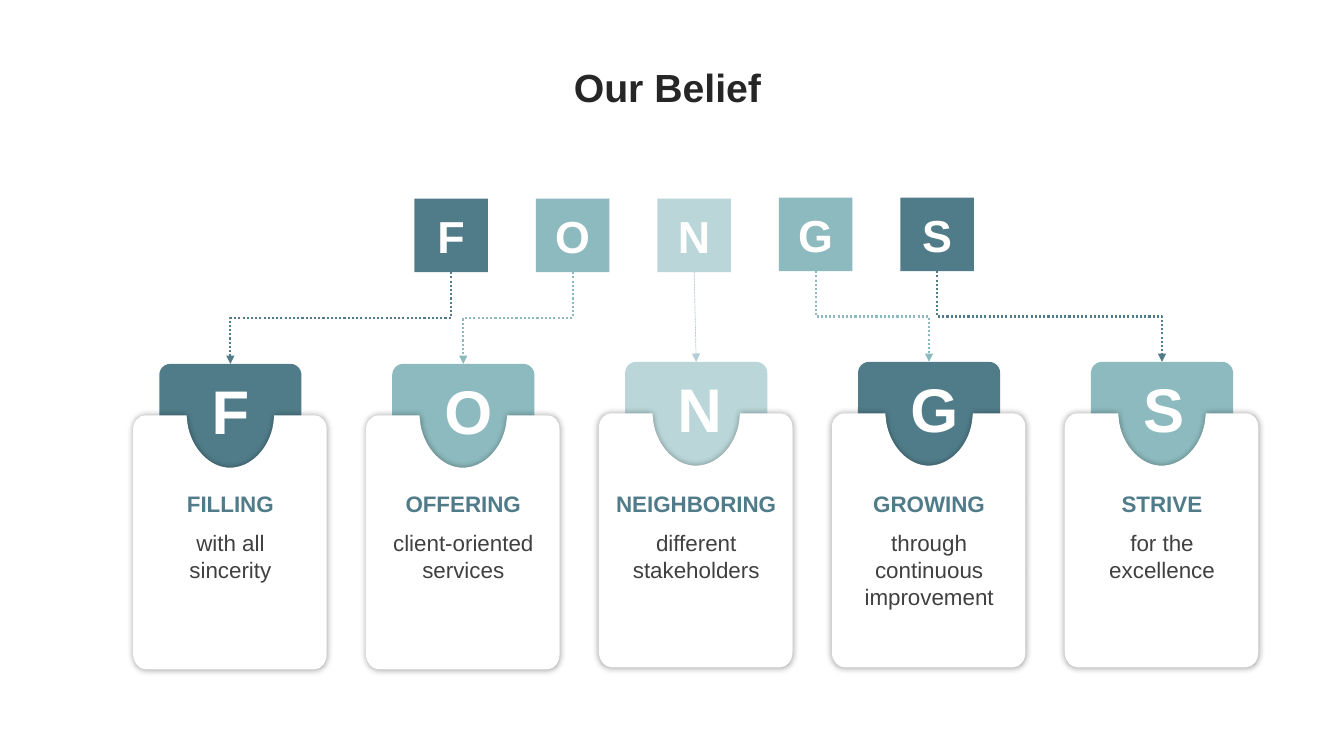
"""Build the "Our Belief" slide: five letters, each leading to its card."""
from lxml.etree import SubElement
from pptx import Presentation
from pptx.dml.color import RGBColor
from pptx.enum.dml import MSO_LINE
from pptx.enum.shapes import MSO_CONNECTOR, MSO_SHAPE
from pptx.enum.text import MSO_ANCHOR, PP_ALIGN
from pptx.oxml.ns import qn
from pptx.util import Inches, Pt

DARK, MEDIUM, LIGHT = "507C89", "8CBABE", "BAD6D8"
TILE_SIZE, TILE_PITCH, CARD_PITCH = 0.73, 1.205, 2.31


def color(hex_text):
    return RGBColor.from_string(hex_text)


def write(shape, text, size, hex_text, bold=False):
    frame = shape.text_frame
    frame.word_wrap = True
    frame.text = text
    paragraph = frame.paragraphs[0]
    paragraph.alignment = PP_ALIGN.CENTER
    font = paragraph.runs[0].font
    font.name, font.size, font.bold = "Arial", Pt(size), bold
    font.color.rgb = color(hex_text)


presentation = Presentation()
presentation.slide_width, presentation.slide_height = Inches(13.33), Inches(7.5)
slide = presentation.slides.add_slide(presentation.slide_layouts[5])
shapes = slide.shapes

title = shapes.title
title.left, title.top = Inches(0.29), Inches(0.5)
title.width, title.height = Inches(12.66), Inches(0.79)
write(title, "Our Belief", 28, "262626", True)
title.text_frame.vertical_anchor = MSO_ANCHOR.MIDDLE
title.text_frame.paragraphs[0].line_spacing = 0.9

# Card outline from its top-left corner; three points together make a curve
outline = [
    [(0.12, 0)], [(0.53, 0)], [(0.54, 0.09)],
    [(0.58, 0.33), (0.76, 0.52), (0.96, 0.52)],
    [(1.17, 0.52), (1.35, 0.33), (1.39, 0.09)],
    [(1.4, 0)], [(1.8, 0)],
    [(1.87, 0), (1.92, 0.06), (1.92, 0.14)],
    [(1.92, 2.37)],
    [(1.92, 2.45), (1.87, 2.52), (1.8, 2.52)],
    [(0.12, 2.52)],
    [(0.06, 2.52), (0, 2.45), (0, 2.37)],
    [(0, 0.14)],
    [(0, 0.06), (0.06, 0), (0.12, 0)],
]

beliefs = [
    ("F", "FILLING", "with all sincerity", DARK, DARK, 1.97, 3.61),
    ("O", "OFFERING", "client-oriented services", MEDIUM, MEDIUM, 1.97, 3.61),
    ("N", "NEIGHBORING", "different stakeholders", LIGHT, LIGHT, 1.97, 3.59),
    ("G", "GROWING", "through continuous improvement", MEDIUM, DARK, 1.96, 3.59),
    ("S", "STRIVE", "for the excellence", DARK, MEDIUM, 1.96, 3.59),
]

for index, (letter, heading, detail, tile_color, tab_color, tile_top, tab_top) in enumerate(beliefs):
    card_left = 1.32 + index * CARD_PITCH
    card_top = tab_top + 0.51

    tile = shapes.add_shape(MSO_SHAPE.RECTANGLE, Inches(4.11 + index * TILE_PITCH), Inches(tile_top),
                            Inches(TILE_SIZE), Inches(TILE_SIZE))
    write(tile, letter, 32, "FFFFFF", True)
    tab = shapes.add_shape(MSO_SHAPE.ROUNDED_RECTANGLE, Inches(card_left + 0.26), Inches(tab_top),
                           Inches(1.41), Inches(1.35))
    tab.adjustments[0] = 0.081
    tab_letter = shapes.add_textbox(Inches(card_left + 0.68), Inches(tab_top + 0.04),
                                    Inches(0.56), Inches(0.84))
    write(tab_letter, letter, 44, "FFFFFF", True)

    points = [(Inches(card_left + x), Inches(card_top + y)) for piece in outline for x, y in piece]
    builder = shapes.build_freeform(*points[0], scale=1.0)
    builder.add_line_segments(points[1:], close=True)
    card = builder.convert_to_shape()
    segments = iter(list(card._element.iter(qn("a:lnTo"))))
    for piece in outline[1:]:
        lines = [next(segments) for point in piece]
        if len(lines) == 3:
            curve = lines[0].makeelement(qn("a:cubicBezTo"))
            lines[0].addprevious(curve)
            for line in lines:
                curve.append(line[0])
                line.getparent().remove(line)

    for shape, fill in ((tile, tile_color), (tab, tab_color), (card, "FFFFFF")):
        shape.shadow.inherit = False
        shape.fill.solid()
        shape.fill.fore_color.rgb = color(fill)
        shape.line.fill.background()
    effects = card._element.spPr.find(qn("a:effectLst"))
    shadow = SubElement(effects, qn("a:outerShdw"), blurRad=str(Pt(5)), dist="0", algn="ctr")
    black = SubElement(shadow, qn("a:srgbClr"), val="000000")
    SubElement(black, qn("a:alpha"), val="40000")

    detail_box = shapes.add_textbox(Inches(card_left + 0.17), Inches(5.2), Inches(1.59), Inches(0.91))
    write(detail_box, detail, 16, "404040")
    heading_box = shapes.add_textbox(Inches(card_left + 0.05), Inches(4.81), Inches(1.83), Inches(0.37))
    write(heading_box, heading, 16, DARK, True)

    straight = letter == "N"
    kind = MSO_CONNECTOR.STRAIGHT if straight else MSO_CONNECTOR.ELBOW
    connector = shapes.add_connector(kind, 0, 0, 0, 0)
    connector.begin_connect(tile, 2)
    connector.end_connect(tab, 0)
    if not straight:
        run = connector.end_x - connector.begin_x
        drop = connector.end_y - connector.begin_y
        middle_x = (connector.begin_x + connector.end_x) // 2
        middle_y = (connector.begin_y + connector.end_y) // 2
        connector.left, connector.top = middle_x - drop // 2, middle_y - abs(run) // 2
        connector.width, connector.height = drop, abs(run)
        transform = connector._element.spPr.find(qn("a:xfrm"))
        transform.set("rot", str((270 if run > 0 else 90) * 60000))
        transform.set("flipH", "1" if run > 0 else "0")
    connector.line.color.rgb = color("B5CDD4" if straight else tile_color)
    connector.line.width = Pt(0.5 if straight else 1.5)
    connector.line.dash_style = MSO_LINE.SQUARE_DOT if straight else MSO_LINE.ROUND_DOT
    SubElement(connector.line._get_or_add_ln(), qn("a:tailEnd"), type="triangle")
    SubElement(connector._element.spPr, qn("a:effectLst"))

presentation.save("out.pptx")
